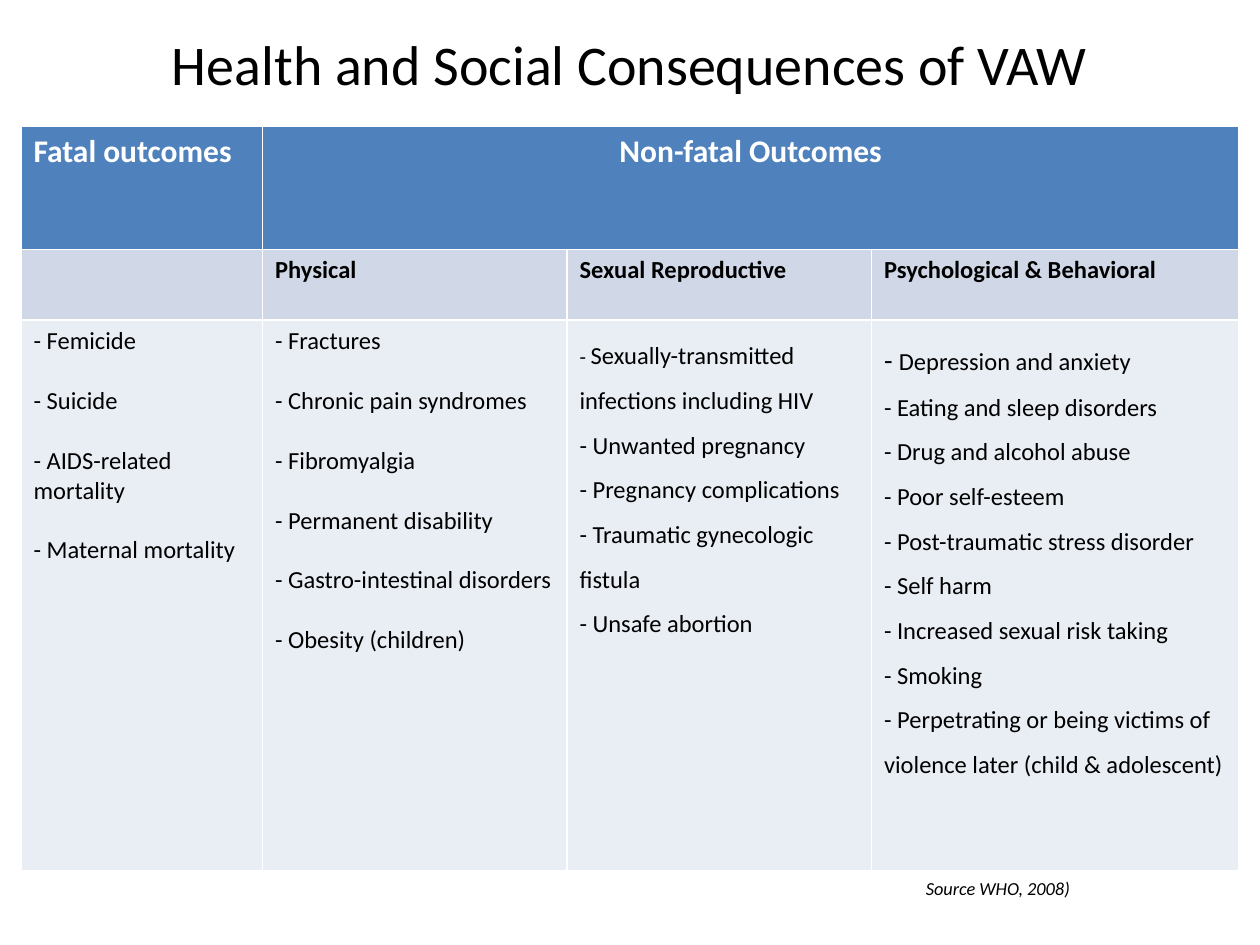
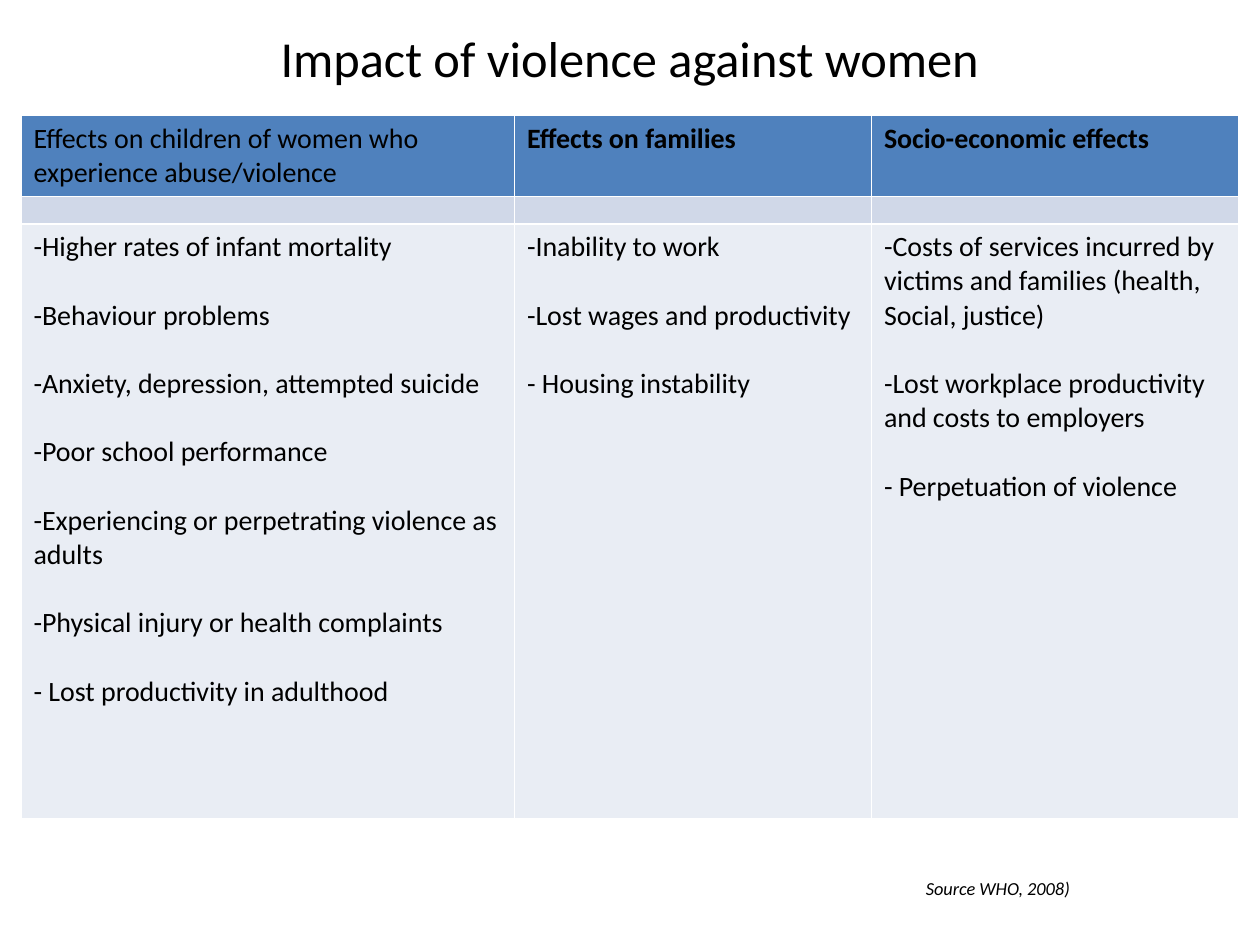
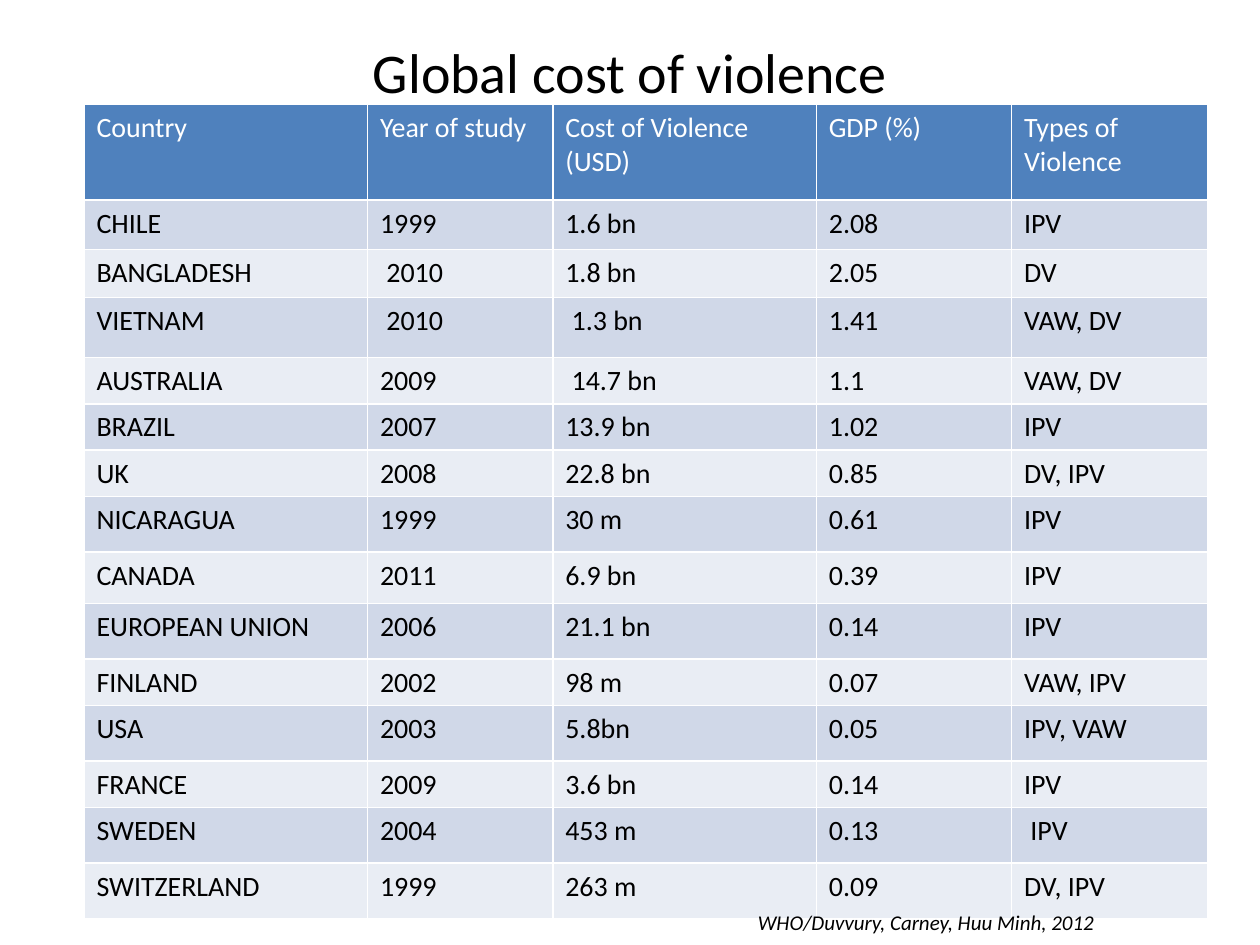
from lxml import etree
from pptx import Presentation
from pptx.dml.color import RGBColor
from pptx.enum.text import MSO_ANCHOR, PP_ALIGN
from pptx.oxml.ns import qn
from pptx.util import Inches, Pt

CENTER, LEFT = PP_ALIGN.CENTER, PP_ALIGN.LEFT
MIDDLE, TOP = MSO_ANCHOR.MIDDLE, MSO_ANCHOR.TOP
FONT = "Calibri"
BLACK, WHITE, BLUE = "000000", "FFFFFF", "4F81BD"
BANDS = ["E9EDF4", "D0D8E8"]
WIDE, HIGH = Inches(10), Inches(7.5)
COLS, ROWS = 120, 90
LINE = 1.22

HARM = [
    ["- Femicide", "- Suicide", "- AIDS-related mortality", "- Maternal mortality"],
    ["- Fractures", "- Chronic pain syndromes", "- Fibromyalgia",
     "- Permanent disability", "- Gastro-intestinal disorders", "- Obesity (children)"],
    ["Sexually-transmitted infections including HIV", "- Unwanted pregnancy",
     "- Pregnancy complications", "- Traumatic gynecologic fistula", "- Unsafe abortion"],
    ["Depression and anxiety", "- Eating and sleep disorders",
     "- Drug and alcohol abuse", "- Poor self-esteem",
     "- Post-traumatic stress disorder", "- Self harm",
     "- Increased sexual risk taking", "- Smoking",
     "- Perpetrating or being victims of violence later (child & adolescent)"],
]
IMPACT = {
    "Effects on children of women who experience abuse/violence": [
        "Higher rates of infant mortality", "Behaviour problems",
        "Anxiety, depression, attempted suicide", "Poor school performance",
        "Experiencing or perpetrating violence as adults",
        "Physical injury or health complaints", "- Lost productivity in adulthood"],
    "Effects on families": [
        "Inability to work", "Lost wages and productivity", "- Housing instability"],
    "Socio-economic effects": [
        "Costs of services incurred by victims and families (health, Social, justice)",
        "Lost workplace productivity and costs to employers",
        "- Perpetuation of violence"],
}
COSTS = [
    ["Country", "Year of study", "Cost of Violence (USD)", "GDP (%)", "Types of Violence"],
    ["CHILE", "1999", "1.6 bn", "2.08", "IPV"],
    ["BANGLADESH", " 2010", "1.8 bn", "2.05", "DV"],
    ["VIETNAM", " 2010", " 1.3 bn", "1.41", "VAW, DV"],
    ["AUSTRALIA", "2009", " 14.7 bn", "1.1", "VAW, DV"],
    ["BRAZIL", "2007", "13.9 bn", "1.02", "IPV"],
    ["UK", "2008", "22.8 bn", "0.85", "DV, IPV"],
    ["NICARAGUA", "1999", "30 m", "0.61", "IPV"],
    ["CANADA", "2011", "6.9 bn", "0.39", "IPV"],
    ["EUROPEAN UNION", "2006", "21.1 bn", "0.14", "IPV"],
    ["FINLAND", "2002", "98 m", "0.07", "VAW, IPV"],
    ["USA", "2003", "5.8bn", "0.05", "IPV, VAW"],
    ["FRANCE", "2009", "3.6 bn", "0.14", "IPV"],
    ["SWEDEN", "2004", "453 m", "0.13", " IPV"],
    ["SWITZERLAND", "1999", "263 m", "0.09", "DV, IPV"],
]


def rgb(code):
    """Turn a hex string into a colour."""
    return RGBColor.from_string(code)


def across(cols):
    """Turn grid columns into a length."""
    return round(WIDE * cols / COLS)


def down(rows):
    """Turn grid rows into a length."""
    return round(HIGH * rows / ROWS)


def ink(run, size, tint=BLACK, bold=False, slant=False):
    """Set the font of a run."""
    font = run.font
    font.name, font.size = FONT, Pt(size)
    font.bold, font.italic = bold, slant
    font.color.rgb = rgb(tint)


def label(slide, box, text, size, align=LEFT, anchor=TOP, slant=False):
    """Place one line of text in a grid box."""
    left, top, width, height = box
    frame = slide.shapes.add_textbox(
        across(left), down(top), across(width), down(height)).text_frame
    frame.word_wrap = True
    frame.vertical_anchor = anchor
    frame.text = text
    par = frame.paragraphs[0]
    par.alignment = align
    ink(par.runs[0], size, slant=slant)


def head(slide, top, height, text, size=32):
    """Place the centred title."""
    label(slide, (6, top, 108, height), text, size, CENTER, MIDDLE)


def source(slide, box, text, size):
    """Place the italic source line."""
    label(slide, box, text, size, slant=True)


def grid(slide, left, top, widths, heights):
    """Add a table with filled rows and return it."""
    table = slide.shapes.add_table(
        len(heights), len(widths), across(left), down(top),
        across(sum(widths)), down(sum(heights))).table
    for col, width in zip(table.columns, widths):
        col.width = across(width)
    for num, (row, height) in enumerate(zip(table.rows, heights)):
        row.height = down(height)
        for cell in row.cells:
            cell.fill.solid()
            cell.fill.fore_color.rgb = rgb(BANDS[num % 2] if num else BLUE)
    return table


def write(cell, text, size, tint=BLACK, bold=False):
    """Write one paragraph in a cell."""
    cell.text_frame.text = text
    ink(cell.text_frame.paragraphs[0].runs[0], size, tint, bold)


def close(par, size):
    """Set the text size of a paragraph's end mark."""
    etree.SubElement(par._p, qn("a:endParaRPr"), sz=str(size * 100))


def bullet(par, size):
    """Give a paragraph a dash bullet without indent, in the text font."""
    props = par._p.get_or_add_pPr()
    props.set("marL", "0")
    props.set("indent", "0")
    etree.SubElement(props, qn("a:buFont"), typeface=FONT)
    etree.SubElement(props, qn("a:buChar"), char="-")
    par.font.size = Pt(size)
    close(par, size)


def points(cell, items, size):
    """List items one empty line apart, with a bullet where no dash is typed."""
    cell.text_frame.text = "\n".join(items)
    for num, par in enumerate(cell.text_frame.paragraphs):
        if not par.text.startswith("- "):
            bullet(par, size)
        if num:
            par.space_before = Pt(round(size * LINE, 1))
        ink(par.runs[0], size)


def loose(cell, items, size, dash):
    """List items at wide line spacing, the first after a dash of its own size."""
    cell.text_frame.text = "\n".join(["- "] + items[1:])
    first = cell.text_frame.paragraphs[0]
    first.add_run().text = items[0]
    for par in cell.text_frame.paragraphs:
        par.line_spacing = 1.5
        for run in par.runs:
            ink(run, size)
    first.runs[0].font.size = Pt(dash)


def harm(slide):
    """Build the slide on health and social consequences."""
    head(slide, 2, 8, "Health and Social Consequences of VAW")
    table = grid(slide, 2, 12, [23, 29, 29, 35], [11.75, 6.75, 52.4])
    write(table.cell(0, 0), "Fatal outcomes", 18, WHITE, True)
    table.cell(0, 1).merge(table.cell(0, 3))
    write(table.cell(0, 1), "Non-fatal Outcomes", 18, WHITE, True)
    table.cell(0, 1).text_frame.paragraphs[0].alignment = CENTER
    kinds = ["Physical", "Sexual Reproductive", "Psychological & Behavioral"]
    for col, kind in enumerate(kinds, 1):
        write(table.cell(1, col), kind, 14, bold=True)
    for col in range(2):
        points(table.cell(2, col), HARM[col], 14)
    for col, dash in [(2, 12), (3, 16)]:
        loose(table.cell(2, col), HARM[col], 14, dash)


def impact(slide):
    """Build the slide on the impact of violence."""
    head(slide, 3, 5, "Impact of violence against women", 28.8)
    table = grid(slide, 2, 11, [47, 34, 35], [7.7, 2.62, 56.65])
    for col, (name, items) in enumerate(IMPACT.items()):
        write(table.cell(0, col), name, 16, bold=col > 0)
        close(table.cell(1, col).text_frame.paragraphs[0], 6)
        points(table.cell(2, col), items, 16)


def costs(slide):
    """Build the slide on costs by country."""
    head(slide, 3.6, 6.4, "Global cost of violence")
    low, tall = 4.42, 5.3
    heights = [9.1, 4.7, 4.6, 5.7, low, low, low, tall, 4.9, tall, low, tall, low,
               tall, tall]
    table = grid(slide, 8, 9.95, [27, 17.65, 25.1, 18.6, 18.65], heights)
    for row, texts in enumerate(COSTS):
        for col, text in enumerate(texts):
            write(table.cell(row, col), text, 16, BLACK if row else WHITE)
    source(slide, (71, 86, 35, 3.6), "WHO/Duvvury, Carney, Huu Minh, 2012", 12)


def main():
    """Build and save the slides."""
    deck = Presentation()
    deck.slide_width, deck.slide_height = WIDE, HIGH
    blank = deck.slide_layouts[6]
    for build in (harm, impact):
        slide = deck.slides.add_slide(blank)
        build(slide)
        source(slide, (87, 82.95, 27.2, 3.5), "Source WHO, 2008)", 10.5)
    costs(deck.slides.add_slide(blank))
    deck.save("out.pptx")


if __name__ == "__main__":
    main()
